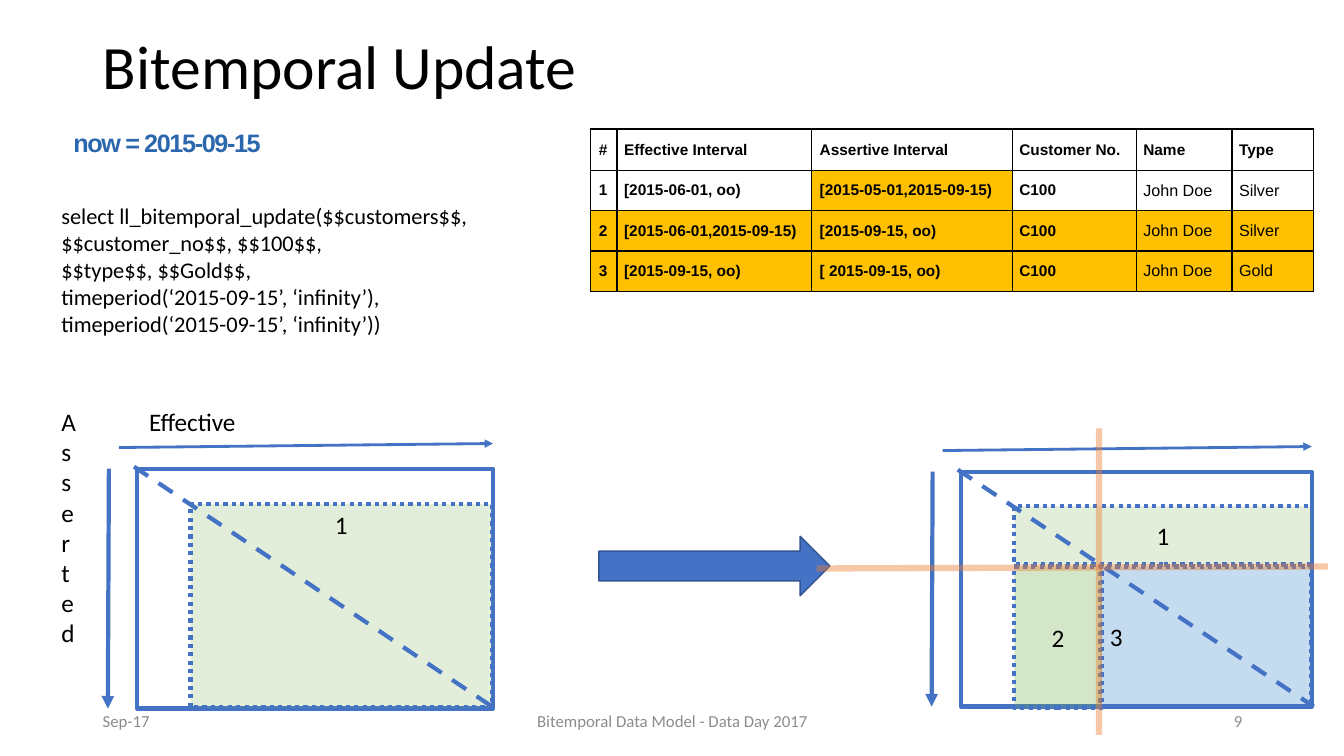
from dataclasses import dataclass
from lxml.etree import SubElement as Sub
from pptx import Presentation
from pptx.dml.color import RGBColor
from pptx.enum.dml import MSO_LINE as Dash
from pptx.enum.shapes import MSO_CONNECTOR as Conn, MSO_SHAPE as Kind
from pptx.enum.text import MSO_ANCHOR as Anchor, MSO_AUTO_SIZE as Fit, PP_ALIGN as Align
from pptx.oxml.ns import qn
from pptx.util import Inches, Pt


@dataclass(frozen=True)
class Theme:
    """Colours, fonts and type sizes."""
    ink: str = "000000"
    blue: str = "4472C4"
    edge: str = "325491"
    now: str = "2A67AC"
    gold: str = "FFC000"
    green: str = "70AD47"
    sky: str = "5B9BD5"
    cross: str = "ED7D31"
    gray: str = "8C8C8C"
    main: str = "Calibri"
    alt: str = "Arial"
    title: float = 44
    label: float = 18
    code: float = 16
    foot: float = 12
    bold: float = 11
    cell: float = 11.5


T = Theme()
TITLE = "Bitemporal Update"
NOW = "now = 2015-09-15"
CODE = [
    "select ll_bitemporal_update($$customers$$,",
    "$$customer_no$$, $$100$$,",
    "$$type$$, $$Gold$$,",
    "timeperiod(‘2015-09-15’, ‘infinity’),",
    "timeperiod(‘2015-09-15’, ‘infinity’))",
]
ROWS = [
    ["#", "Effective Interval", "Assertive Interval", "Customer No.", "Name", "Type"],
    ["1", "[2015-06-01, oo)", "[2015-05-01,2015-09-15)", "C100", "John Doe", "Silver"],
    ["2", "[2015-06-01,2015-09-15)", "[2015-09-15, oo)", "C100", "John Doe", "Silver"],
    ["3", "[2015-09-15, oo)", "[ 2015-09-15, oo)", "C100", "John Doe", "Gold"],
]
WIDTHS = [0.26, 1.93, 1.99, 1.23, 0.95, 0.81]
HEIGHTS = [0.41, 0.4, 0.4, 0.4]
FOOT = [
    ("9", (9.42, 6.95, 3, 0.4), Align.RIGHT),
    ("Sep-17", (0.92, 6.95, 3, 0.4), Align.LEFT),
    ("Bitemporal Data Model - Data Day 2017", (4.42, 6.95, 4.5, 0.4), Align.CENTER),
]
MID, TOP = Anchor.MIDDLE, Anchor.TOP
PANELS = [
    {"frame": (1.36, 4.65, 3.53, 2.38), "back": [],
     "front": [("1", (1.89, 5, 2.99, 2.02), T.green, 20, Align.CENTER, TOP)]},
    {"frame": (9.53, 4.68, 3.48, 2.33),
     "back": [("3", (10.91, 5.62, 2.09, 1.39), T.sky, 35, Align.LEFT, MID)],
     "front": [("1", (10.06, 5.02, 2.95, 0.58), T.green, 20, Align.CENTER, MID),
               ("2", (10.06, 5.62, 0.87, 1.4), T.green, 30, Align.CENTER, MID)]},
]
CROSS = [((8.1, 5.64), (13.17, 5.62)), ((10.9, 4.25), (10.9, 7.29))]


def inch(nums):
    return [Inches(n) for n in nums]


def rgb(code):
    return RGBColor.from_string(code)


def style(para, size, color=T.ink, face=T.main, bold=False, align=Align.LEFT):
    font = para.font
    font.size, font.name, font.bold = Pt(size), face, bold
    font.color.rgb = rgb(color)
    para.alignment = align


def fade(fill, pct):
    tone = fill._xPr.find(qn("a:solidFill"))[0]
    Sub(tone, qn("a:alpha"), val=str(pct * 1000))


def write(shapes, lines, box, size, color=T.ink, face=T.main, bold=False,
          align=Align.LEFT, anchor=TOP, grow=True):
    shape = shapes.add_textbox(*inch(box))
    frame = shape.text_frame
    frame.text = "\n".join(lines)
    frame.word_wrap, frame.vertical_anchor = True, anchor
    frame.auto_size = Fit.SHAPE_TO_FIT_TEXT if grow else Fit.NONE
    for para in frame.paragraphs:
        style(para, size, color, face, bold, align)
    return frame


def draw(shapes, kind, box, color=None, pct=100, edge=T.blue, width=3, dash=None):
    shape = shapes.add_shape(kind, *inch(box))
    shape.shadow.inherit = False
    if color:
        shape.fill.solid()
        shape.fill.fore_color.rgb = rgb(color)
        if pct < 100:
            fade(shape.fill, pct)
    else:
        shape.fill.background()
    shape.line.color.rgb, shape.line.width = rgb(edge), Pt(width)
    if dash:
        shape.line.dash_style = dash
    return shape


def link(shapes, start, end, color=T.blue, width=3, dash=None, head=False, pct=100):
    wire = shapes.add_connector(Conn.STRAIGHT, *inch(start + end))
    line = wire.line
    line.color.rgb, line.width = rgb(color), Pt(width)
    if dash:
        line.dash_style = dash
    if pct < 100:
        fade(line.fill, pct)
    if head:
        Sub(line._get_or_add_ln(), qn("a:tailEnd"), type="triangle")
    Sub(wire._element.spPr, qn("a:effectLst"))


def zone(shapes, text, box, color, pct, align, anchor):
    shape = draw(shapes, Kind.RECTANGLE, box, color, pct, dash=Dash.ROUND_DOT)
    frame = shape.text_frame
    frame.text, frame.vertical_anchor = text, anchor
    style(frame.paragraphs[0], T.label, align=align)


def panel(slide, data):
    shapes = slide.shapes.add_group_shape().shapes
    left, top, width, height = data["frame"]
    right, base = left + width, top + height
    for item in data["back"]:
        zone(shapes, *item)
    draw(shapes, Kind.RECTANGLE, data["frame"])
    for item in data["front"]:
        zone(shapes, *item)
    link(shapes, (left - 0.18, top - 0.21), (right, top - 0.25), width=2, head=True)
    link(shapes, (left - 0.03, top - 0.02), (right + 0.02, base), dash=Dash.DASH)
    link(shapes, (left - 0.28, top), (left - 0.29, base), head=True)


def border(cell):
    props = cell._tc.get_or_add_tcPr()
    for spot, side in enumerate(("a:lnL", "a:lnR", "a:lnT", "a:lnB")):
        line = props.makeelement(qn(side), {"w": str(Pt(1))})
        Sub(Sub(line, qn("a:solidFill")), qn("a:srgbClr"), val=T.ink)
        props.insert(spot, line)


def grid(slide):
    box = inch((5.86, 1.28, sum(WIDTHS), sum(HEIGHTS)))
    table = slide.shapes.add_table(len(ROWS), len(WIDTHS), *box).table
    table.first_row = table.horz_banding = False
    for col, width in zip(table.columns, WIDTHS):
        col.width = Inches(width)
    for r, (row, height) in enumerate(zip(ROWS, HEIGHTS)):
        table.rows[r].height = Inches(height)
        for c, text in enumerate(row):
            cell = table.cell(r, c)
            cell.text, cell.vertical_anchor = text, MID
            cell.margin_left = cell.margin_right = cell.margin_top = cell.margin_bottom = 0
            if r > 1 or (r, c) == (1, 2):
                cell.fill.solid()
                cell.fill.fore_color.rgb = rgb(T.gold)
            else:
                cell.fill.background()
            border(cell)
            bold = r == 0 or c < 4
            para = cell.text_frame.paragraphs[0]
            style(para, T.bold if bold else T.cell, face=T.alt, bold=bold)
            para._p.get_or_add_pPr().set("marL", str(Inches(0.08 if c in (0, 2) else 0.07)))


def main():
    deck = Presentation()
    deck.slide_width, deck.slide_height = inch((13.33, 7.5))
    slide = deck.slides.add_slide(deck.slide_layouts[5])
    shapes = slide.shapes

    title = shapes.title
    title.left, title.top, title.width, title.height = inch((0.92, 0.22, 11.5, 0.93))
    title.text_frame.text, title.text_frame.vertical_anchor = TITLE, MID
    head = title.text_frame.paragraphs[0]
    style(head, T.title)
    head.line_spacing = 0.9

    grid(slide)
    tall = write(shapes, ["Asserted"], (0.51, 3.98, 0.56, 3.24), T.label)
    tall._bodyPr.set("vert", "wordArtVert")
    for data in PANELS:
        panel(slide, data)
    write(shapes, ["Effective"], (1.38, 3.98, 1.26, 0.27), T.label)
    draw(shapes, Kind.RIGHT_ARROW, (5.94, 5.32, 2.29, 0.59), T.blue, edge=T.edge, width=1)

    now = write(shapes, [NOW], (0.61, 1.21, 2.48, 0.4), T.label, T.now, T.alt, True)
    para = now.paragraphs[0]
    para.space_before, para.space_after = Pt(18.9), Pt(10.5)
    para._p.get_or_add_pPr().set("marL", str(Inches(0.02)))
    para.runs[0].font._element.set("spc", "-100")
    write(shapes, CODE, (0.51, 1.96, 4.39, 1.72), T.code)
    for text, box, align in FOOT:
        write(shapes, [text], box, T.foot, T.gray, align=align, anchor=MID, grow=False)
    for start, end in CROSS:
        link(shapes, start, end, T.cross, 4.5, pct=42)
    deck.save("out.pptx")


if __name__ == "__main__":
    main()
